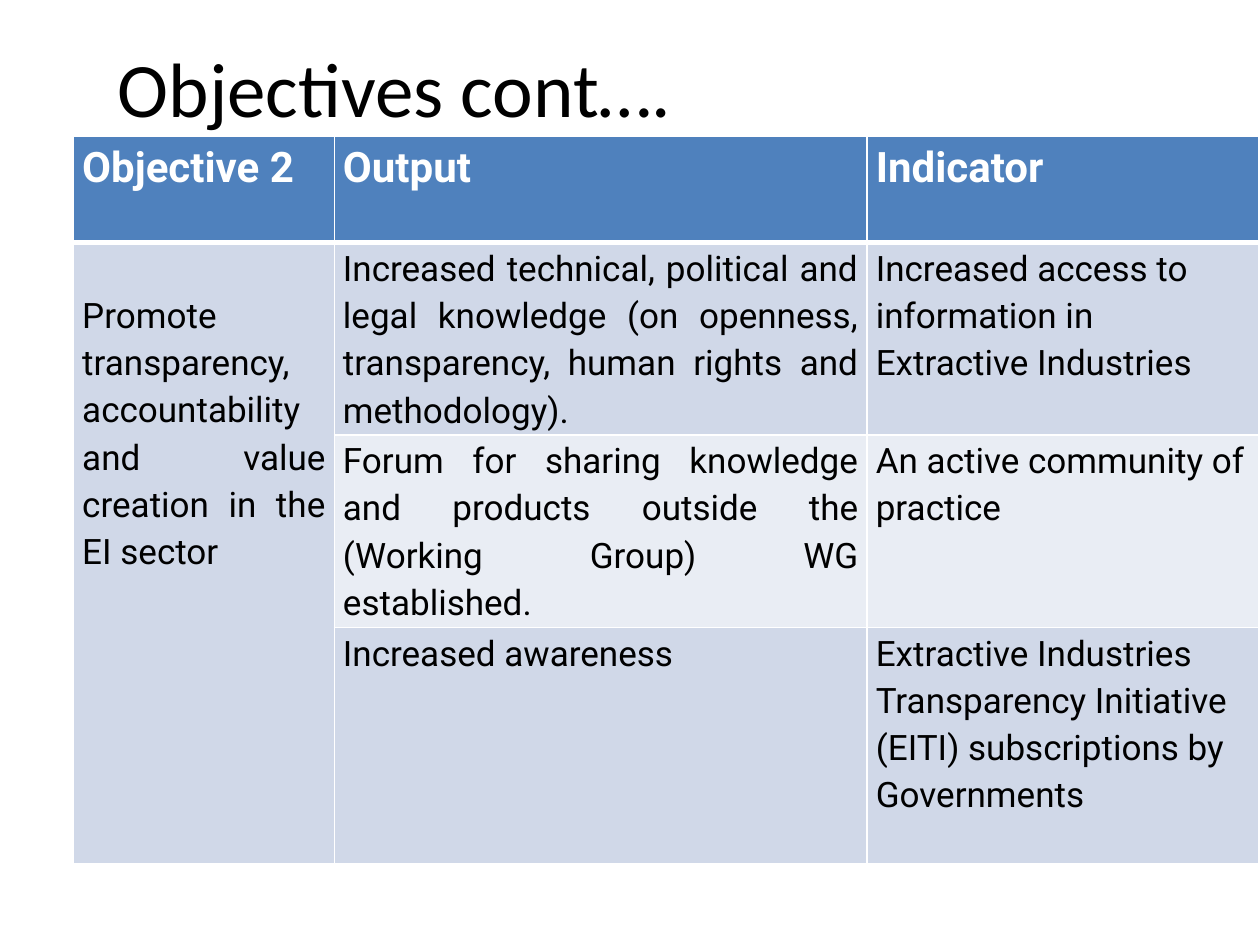
from dataclasses import dataclass

import lxml.etree
import pptx
import pptx.dml.color
import pptx.enum.text
import pptx.oxml.ns
import pptx.util

Pt = pptx.util.Pt
ALIGN = pptx.enum.text.PP_ALIGN


@dataclass(frozen=True)
class Theme:
    heading_font: str = "Calibri"
    body_font: str = "Roboto"
    title_size: float = 44
    header_size: float = 24
    body_size: float = 20
    black: str = "000000"
    white: str = "FFFFFF"
    header_fill: str = "4F81BD"
    band_fills: tuple = ("D0D8E8", "E9EDF4")
    line_spacing: float = 1.15
    thin_border: float = 1
    thick_border: float = 3


THEME = Theme()

COLUMN_WIDTHS = (149, 304.5, 224)
ROW_HEIGHTS = (60.5, 110, 110, 135)
OBJECTIVE_TOP_MARGIN = 27

HEADERS = ("Objective 2", "Output", "Indicator")
OBJECTIVE = "Promote transparency, accountability and value creation in the EI sector"
RESULTS = (
    ("Increased technical, political and legal knowledge (on openness, "
     "transparency, human rights and methodology).",
     "Increased access to information in Extractive Industries"),
    ("Forum for sharing knowledge and products outside the (Working Group) WG established.",
     "An active community of practice"),
    ("Increased awareness",
     "Extractive Industries Transparency Initiative (EITI) subscriptions by Governments"),
)


def color(value):
    return pptx.dml.color.RGBColor.from_string(value)


def format_font(font, name, size, text_color, bold=False):
    font.name = name
    font.size = Pt(size)
    font.bold = bold
    font.color.rgb = color(text_color)


def set_title(slide, text):
    title = slide.shapes.title
    title.left, title.top, title.width, title.height = Pt(60), Pt(21.5), Pt(636), Pt(56)
    title.text_frame.text = text
    title.text_frame.vertical_anchor = pptx.enum.text.MSO_ANCHOR.MIDDLE
    paragraph = title.text_frame.paragraphs[0]
    paragraph.alignment = ALIGN.LEFT
    format_font(paragraph.runs[0].font, THEME.heading_font, THEME.title_size, THEME.black)


def set_borders(cell, row):
    """Draw white rules, with a thick one between header and body."""
    widths = dict.fromkeys(("lnL", "lnR", "lnT", "lnB"), THEME.thin_border)
    if row == 0:
        widths["lnB"] = THEME.thick_border
    elif row == 1:
        widths["lnT"] = THEME.thick_border
    qn = pptx.oxml.ns.qn
    properties = cell._tc.get_or_add_tcPr()
    for side, width in widths.items():
        line = lxml.etree.SubElement(properties, qn(f"a:{side}"), w=str(Pt(width)))
        fill = lxml.etree.SubElement(line, qn("a:solidFill"))
        lxml.etree.SubElement(fill, qn("a:srgbClr"), val=THEME.white)


def style_cell(cell, row):
    set_borders(cell, row)
    cell.fill.solid()
    fill = THEME.band_fills[(row - 1) % 2] if row else THEME.header_fill
    cell.fill.fore_color.rgb = color(fill)
    cell.margin_left = cell.margin_right = Pt(5)
    cell.margin_top = cell.margin_bottom = Pt(0)


def write_cell(cell, text, row, column):
    cell.text_frame.text = text
    paragraph = cell.text_frame.paragraphs[0]
    paragraph.alignment = ALIGN.LEFT if column == 2 else ALIGN.JUSTIFY
    paragraph.line_spacing = THEME.line_spacing
    is_header = row == 0
    format_font(paragraph.runs[0].font, THEME.body_font,
                THEME.header_size if is_header else THEME.body_size,
                THEME.white if is_header else THEME.black, is_header)


def add_objectives_table(slide):
    frame = slide.shapes.add_table(
        len(ROW_HEIGHTS), len(COLUMN_WIDTHS), Pt(42), Pt(78),
        Pt(sum(COLUMN_WIDTHS)), Pt(sum(ROW_HEIGHTS)))
    table = frame.table
    for column, width in zip(table.columns, COLUMN_WIDTHS):
        column.width = Pt(width)
    for row, height in zip(table.rows, ROW_HEIGHTS):
        row.height = Pt(height)

    # Cell styles and the objective spanning all results
    for row in range(len(ROW_HEIGHTS)):
        for column in range(len(COLUMN_WIDTHS)):
            style_cell(table.cell(row, column), row)
    objective_cell = table.cell(1, 0)
    objective_cell.merge(table.cell(len(RESULTS), 0))
    objective_cell.margin_top = Pt(OBJECTIVE_TOP_MARGIN)

    # Wording
    for column, header in enumerate(HEADERS):
        write_cell(table.cell(0, column), header, 0, column)
    write_cell(objective_cell, OBJECTIVE, 1, 0)
    for row, result in enumerate(RESULTS, start=1):
        for column, text in enumerate(result, start=1):
            write_cell(table.cell(row, column), text, row, column)


def main():
    presentation = pptx.Presentation()
    presentation.slide_width, presentation.slide_height = Pt(720), Pt(540)
    slide = presentation.slides.add_slide(presentation.slide_layouts.get_by_name("Title Only"))
    set_title(slide, "Objectives cont….")
    add_objectives_table(slide)
    presentation.save("out.pptx")


if __name__ == "__main__":
    main()
